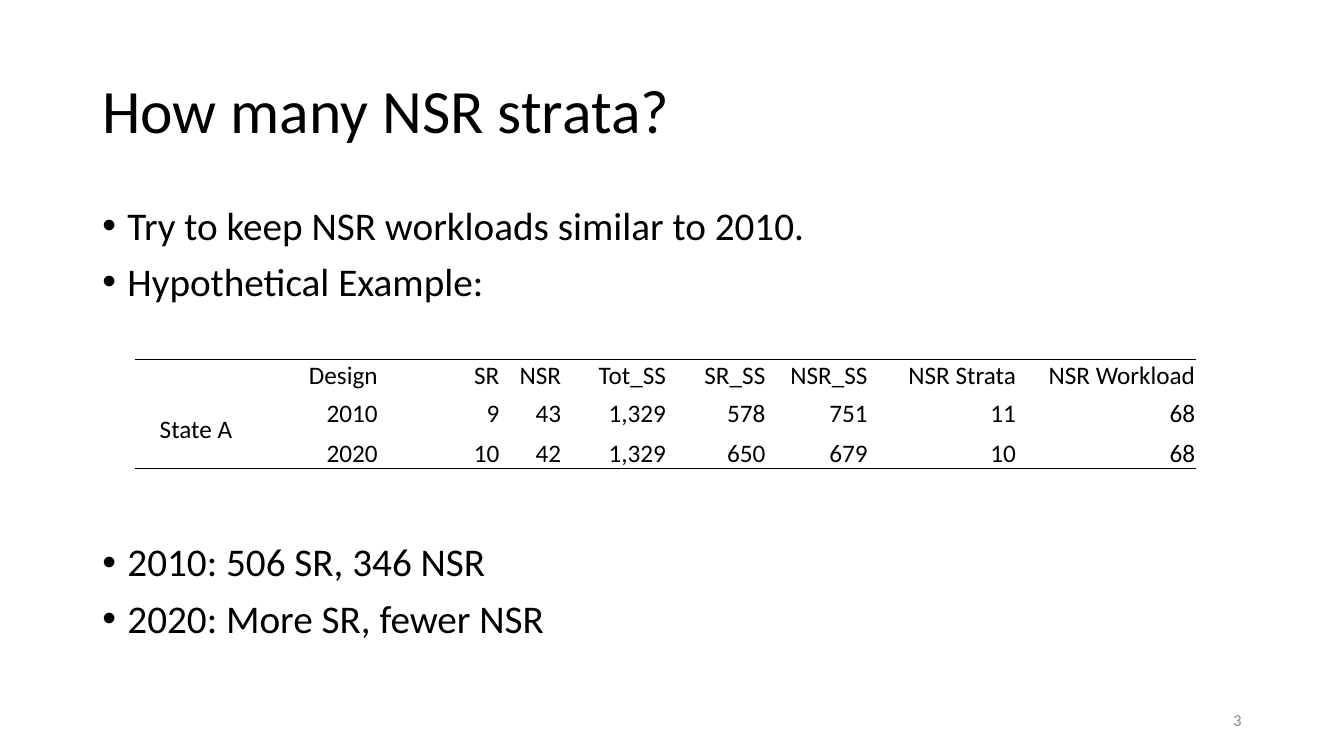
from lxml.etree import SubElement
from pptx import Presentation
from pptx.dml.color import RGBColor
from pptx.enum.text import MSO_ANCHOR as Anchor, PP_ALIGN as Align
from pptx.oxml.ns import qn
from pptx.util import Pt

FONT = "Calibri"
BLACK = "000000"
GREY = "8C8C8C"
COLUMN_WIDTHS = [87, 87, 87, 44, 75, 71, 73, 106, 128]
ROW_HEIGHTS = [22, 28, 28]
STRATA_ROWS = [
    ["", "Design", "SR", "NSR", "Tot_SS", "SR_SS", "NSR_SS", "NSR Strata", "NSR Workload"],
    ["State A", "2010", "9", "43", "1,329", "578", "751", "11", "68"],
    ["", "2020", "10", "42", "1,329", "650", "679", "10", "68"],
]
BULLETS = [
    ("Try to keep NSR workloads similar to 2010.", 0),
    ("Hypothetical Example:", 10),
    ("2010: 506 SR, 346 NSR", 170),
    ("2020: More SR, fewer NSR", 10),
]


def color(value):
    return RGBColor.from_string(value)


def add_run(paragraph, text, size, font_color=BLACK):
    run = paragraph.add_run()
    run.text = text
    run.font.name = FONT
    run.font.size = Pt(size)
    run.font.color.rgb = color(font_color)


def add_text_frame(slide, left, top, width, height, anchor):
    shape = slide.shapes.add_textbox(Pt(left), Pt(top), Pt(width), Pt(height))
    frame = shape.text_frame
    frame.word_wrap = True
    frame.vertical_anchor = anchor
    return frame


def add_line_text(slide, box, text, size, font_color=BLACK, align=Align.LEFT):
    paragraph = add_text_frame(slide, *box, Anchor.MIDDLE).paragraphs[0]
    paragraph.alignment = align
    paragraph.line_spacing = 0.9
    add_run(paragraph, text, size, font_color)


def add_bullets(slide, box, items):
    frame = add_text_frame(slide, *box, Anchor.TOP)
    for index, (text, space_before) in enumerate(items):
        paragraph = frame.add_paragraph() if index else frame.paragraphs[0]
        paragraph.line_spacing = 0.9
        paragraph.space_before = Pt(space_before)
        properties = paragraph._p.get_or_add_pPr()
        properties.set("marL", str(Pt(18)))
        properties.set("indent", str(Pt(-18)))
        SubElement(properties, qn("a:buFont"), typeface="Arial")
        SubElement(properties, qn("a:buChar"), char="•")
        add_run(paragraph, text, 28)


def set_borders(cell, ruled_sides):
    properties = cell._tc.get_or_add_tcPr()
    for side in ("lnL", "lnR", "lnT", "lnB"):
        line = SubElement(properties, qn(f"a:{side}"), w=str(Pt(1)))
        if side in ruled_sides:
            fill = SubElement(line, qn("a:solidFill"))
            SubElement(fill, qn("a:srgbClr"), val=BLACK)
        else:
            SubElement(line, qn("a:noFill"))


def fill_cell(cell, text, align, anchor, ruled_sides):
    cell.margin_left = cell.margin_right = cell.margin_top = Pt(0.75)
    cell.margin_bottom = Pt(0)
    cell.vertical_anchor = anchor
    set_borders(cell, ruled_sides)
    cell.fill.background()
    paragraph = cell.text_frame.paragraphs[0]
    paragraph.alignment = align
    paragraph.font.size = Pt(18)
    if text:
        add_run(paragraph, text, 18)


def add_strata_table(slide, left, top):
    frame = slide.shapes.add_table(
        len(ROW_HEIGHTS), len(COLUMN_WIDTHS), Pt(left), Pt(top),
        Pt(sum(COLUMN_WIDTHS)), Pt(sum(ROW_HEIGHTS)))
    table = frame.table
    table.first_row = table.horz_banding = False
    for column, width in zip(table.columns, COLUMN_WIDTHS):
        column.width = Pt(width)
    for row, height in zip(table.rows, ROW_HEIGHTS):
        row.height = Pt(height)
    table.cell(1, 0).merge(table.cell(2, 0))
    last_row = len(STRATA_ROWS) - 1
    for row_index, values in enumerate(STRATA_ROWS):
        for column_index, text in enumerate(values):
            cell = table.cell(row_index, column_index)
            is_state = column_index == 0
            ruled_sides = ["lnT"] if row_index == 0 else []
            if row_index == last_row or cell.is_merge_origin:
                ruled_sides.append("lnB")
            fill_cell(cell, text, Align.CENTER if is_state else Align.RIGHT,
                      Anchor.MIDDLE if is_state else Anchor.BOTTOM, ruled_sides)


def main():
    presentation = Presentation()
    presentation.slide_width = Pt(960)
    presentation.slide_height = Pt(540)
    slide = presentation.slides.add_slide(presentation.slide_layouts[6])
    add_line_text(slide, (66, 28.75, 828, 104.4), "How many NSR strata?", 44)
    add_bullets(slide, (66, 143.75, 828, 342.6), BULLETS)
    add_strata_table(slide, 96.5, 256.5)
    add_line_text(slide, (678, 500.5, 216, 28.75), "3", 12, GREY, Align.RIGHT)
    presentation.save("out.pptx")


if __name__ == "__main__":
    main()
